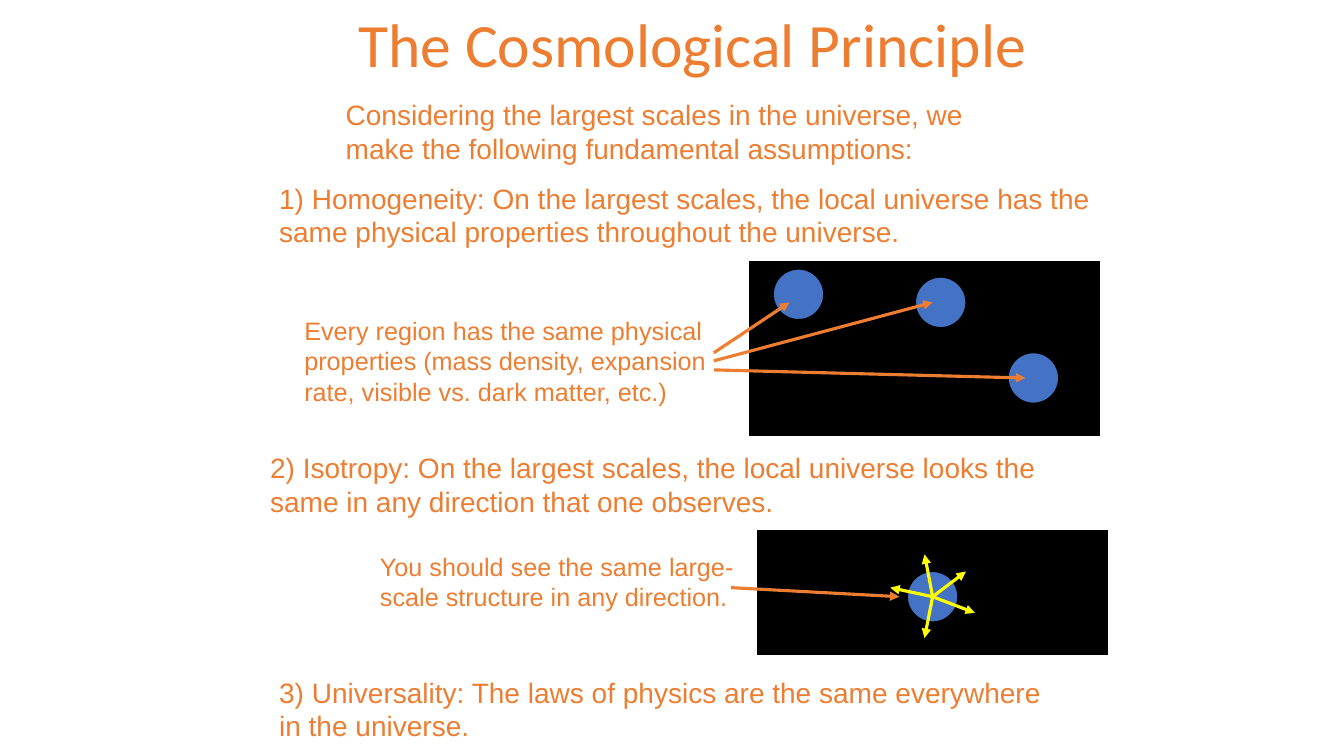
from lxml import etree
from pptx import Presentation
from pptx.dml.color import RGBColor
from pptx.enum.shapes import MSO_CONNECTOR, MSO_SHAPE
from pptx.enum.text import MSO_ANCHOR, PP_ALIGN
from pptx.oxml.ns import qn
from pptx.util import Inches, Pt

STRAIGHT = MSO_CONNECTOR.STRAIGHT
RECTANGLE, OVAL = MSO_SHAPE.RECTANGLE, MSO_SHAPE.OVAL
MIDDLE, CENTER = MSO_ANCHOR.MIDDLE, PP_ALIGN.CENTER
ORANGE, BLUE, YELLOW = "ED7D31", "4472C4", "FFFF00"
BLACK, WHITE = "000000", "FFFFFF"


def paint(color_format, hex_color):
    color_format.rgb = RGBColor.from_string(hex_color)


def format_font(font, name, size):
    font.name = name
    font.size = Pt(size)
    paint(font.color, ORANGE)


deck = Presentation()
deck.slide_width, deck.slide_height = Inches(13.33), Inches(7.5)
page = deck.slides.add_slide(deck.slide_layouts[5])

title = page.shapes.title
title.left, title.top = Inches(2.83), Inches(0)
title.width, title.height = Inches(8.08), Inches(0.95)
title.text_frame.text = "The Cosmological Principle"
title.text_frame.vertical_anchor = MIDDLE
heading = title.text_frame.paragraphs[0]
heading.alignment = CENTER
heading.line_spacing = 0.9
format_font(heading.runs[0].font, "Calibri", 44)

# Statements and explanations: left, top, width, height, size, wording
texts = [
    (3.33, 0.92, 7.08, 0.77, 20,
     "Considering the largest scales in the universe, we make the following "
     "fundamental assumptions:"),
    (2.67, 1.75, 8.25, 0.77, 20,
     "1) Homogeneity: On the largest scales, the local universe has the same "
     "physical properties throughout the universe."),
    (2.92, 3.08, 4.42, 1, 18,
     "Every region has the same physical properties (mass density, expansion "
     "rate, visible vs. dark matter, etc.)"),
    (2.58, 4.42, 8.25, 0.77, 20,
     "2) Isotropy: On the largest scales, the local universe looks the same "
     "in any direction that one observes."),
    (3.67, 5.42, 3.75, 0.7, 18,
     "You should see the same large-scale structure in any direction."),
    (2.67, 6.65, 7.92, 0.77, 20,
     "3) Universality: The laws of physics are the same everywhere in the "
     "universe."),
]
for left, top, width, height, size, wording in texts:
    box = page.shapes.add_textbox(
        Inches(left), Inches(top), Inches(width), Inches(height))
    box.text_frame.word_wrap = True
    box.text_frame.text = wording
    format_font(box.text_frame.paragraphs[0].runs[0].font, "Arial", size)

# Black skies with the blue regions on them
bodies = [
    (RECTANGLE, 7.42, 2.58, 3.5, 1.75, BLACK, WHITE),
    (RECTANGLE, 7.5, 5.25, 3.5, 1.25, BLACK, WHITE),
]
for left, top in [(7.67, 2.67), (10, 3.5), (9.08, 2.75), (9, 5.67)]:
    bodies.append((OVAL, left, top, 0.5, 0.5, BLUE, BLACK))
for kind, left, top, width, height, fill, outline in bodies:
    body = page.shapes.add_shape(
        kind, Inches(left), Inches(top), Inches(width), Inches(height))
    body.shadow.inherit = False
    body.fill.solid()
    paint(body.fill.fore_color, fill)
    paint(body.line.color, outline)
    body.line.width = Pt(0.75)

# Pointers from the explanations, then sight lines from the observer
arrows = [
    (7.08, 3.5, 7.83, 3, ORANGE),
    (7.08, 3.58, 9.25, 3, ORANGE),
    (7.08, 3.67, 10.17, 3.75, ORANGE),
    (7.25, 5.83, 8.92, 5.92, ORANGE),
]
for x, y in [(9.58, 5.67), (9.67, 6.08), (9.17, 6.33), (8.83, 5.83), (9.17, 5.5)]:
    arrows.append((9.25, 5.92, x, y, YELLOW))
for start_x, start_y, end_x, end_y, color in arrows:
    arrow = page.shapes.add_connector(
        STRAIGHT, Inches(start_x), Inches(start_y), Inches(end_x), Inches(end_y))
    paint(arrow.line.color, color)
    arrow.line.width = Pt(2.25)
    etree.SubElement(arrow.line._get_or_add_ln(), qn("a:tailEnd"), type="triangle")
    etree.SubElement(arrow._element.spPr, qn("a:effectLst"))

deck.save("out.pptx")
